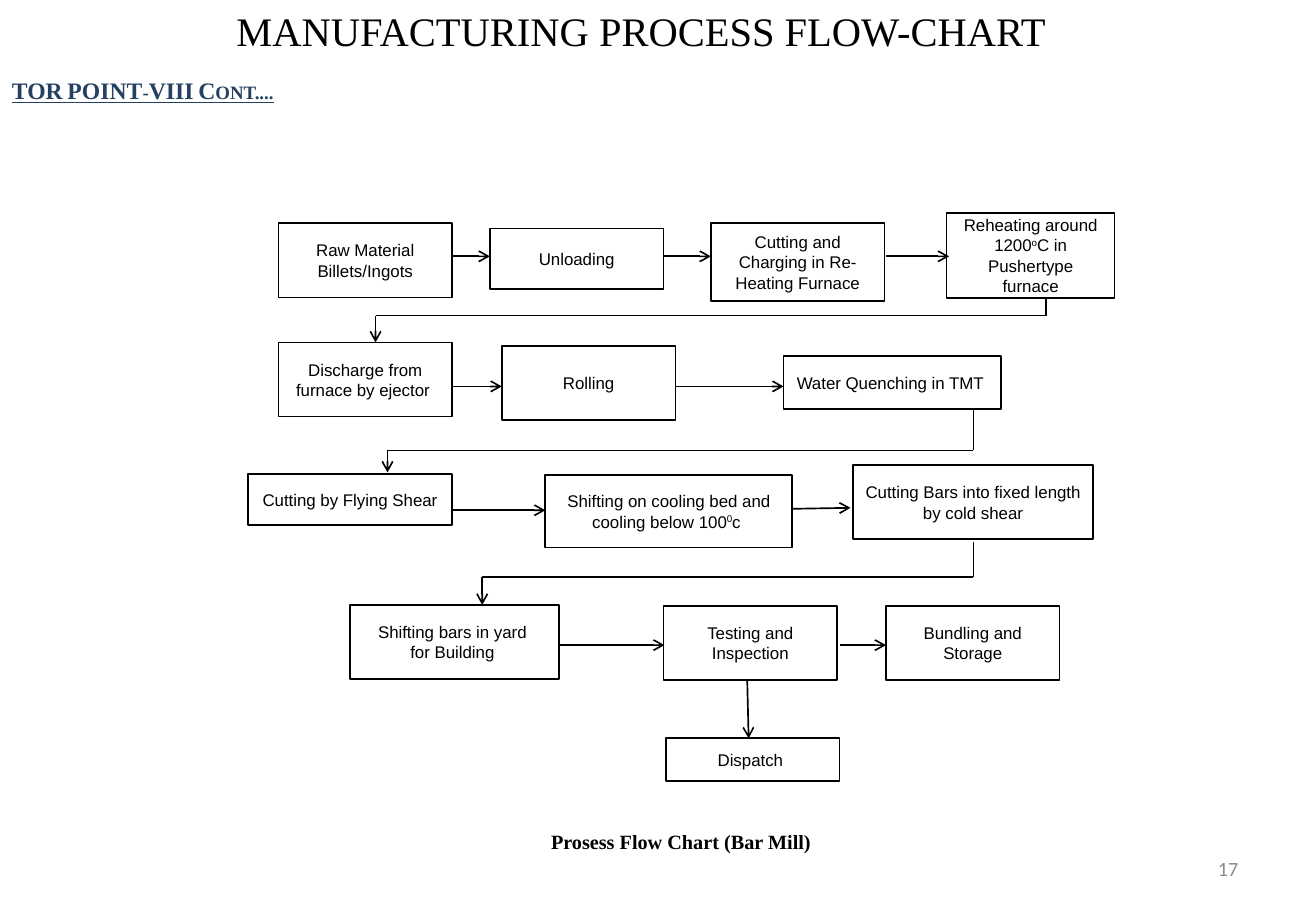
"""Build the bar mill manufacturing process flow-chart slide."""
from itertools import pairwise

from lxml.etree import SubElement
from pptx import Presentation
from pptx.dml.color import RGBColor
from pptx.enum.shapes import MSO_CONNECTOR, MSO_SHAPE
from pptx.enum.text import MSO_ANCHOR, PP_ALIGN
from pptx.oxml.ns import qn
from pptx.util import Cm, Pt


def color(value):
    """Turn a hex string into a colour."""
    return RGBColor.from_string(value)


def write(box, text, font="Times New Roman", size=12, ink="000000", bold=False,
          align=PP_ALIGN.CENTER, anchor=MSO_ANCHOR.MIDDLE, small_caps=False):
    """Fill a box with text; parts between carets are raised."""
    frame = box.text_frame
    frame.word_wrap = True
    frame.vertical_anchor = anchor
    for index, line in enumerate(text.split("\n")):
        para = frame.add_paragraph() if index else frame.paragraphs[0]
        para.alignment = align
        for part, words in enumerate(line.split("^")):
            span = para.add_run()
            span.text = words
            span.font.name = font
            span.font.size = Pt(size)
            span.font.bold = bold
            span.font.color.rgb = color(ink)
            if part % 2:
                span.font._element.set("baseline", "30000")
            if small_caps:
                span.font.underline = True
                span.font._element.set("cap", "small")


deck = Presentation()
deck.slide_width = Cm(27.51)
deck.slide_height = Cm(19.05)
page = deck.slides.add_slide(deck.slide_layouts[6])

labels = [
    (4.4, 0, 18.2, 1.3, "MANUFACTURING PROCESS FLOW-CHART ",
     dict(size=24, anchor=MSO_ANCHOR.TOP)),
    (19.71, 17.65, 6.43, 1.02, "17",
     dict(font="Calibri", ink="8C8C8C", align=PP_ALIGN.RIGHT)),
    (0, 1.47, 24.97, 0.86, "TOR POINT-VIII Cont....",
     dict(size=14, ink="254061", bold=True, align=PP_ALIGN.LEFT,
          anchor=MSO_ANCHOR.TOP, small_caps=True)),
    (11.18, 17.2, 6.12, 0.8, "Prosess Flow Chart (Bar Mill)", dict(bold=True)),
]
for left, top, width, height, text, style in labels:
    box = page.shapes.add_textbox(Cm(left), Cm(top), Cm(width), Cm(height))
    write(box, text, **style)

steps = [
    (5.82, 4.67, 3.63, 1.55, "Raw Material Billets/Ingots"),
    (10.24, 4.78, 3.63, 1.27, "Unloading"),
    (14.86, 4.67, 3.63, 1.63, "Cutting and Charging in Re-Heating Furnace"),
    (19.79, 4.45, 3.51, 1.78, "Reheating around 1200^o^C in Pushertype furnace"),
    (5.82, 7.16, 3.63, 1.55, "Discharge from furnace by ejector "),
    (10.49, 7.24, 3.63, 1.55, "Rolling"),
    (16.38, 7.44, 4.55, 1.12, "Water Quenching in TMT "),
    (5.18, 9.91, 4.27, 1.07, "Cutting by Flying Shear"),
    (11.4, 9.93, 5.16, 1.52, "Shifting on cooling bed and cooling below 100^0^c "),
    (17.83, 9.73, 5.02, 1.55, "Cutting Bars into fixed length by cold shear"),
    (7.32, 12.65, 4.37, 1.55, "Shifting bars in yard \nfor Building "),
    (13.87, 12.67, 3.63, 1.55, "Testing and Inspection"),
    (18.52, 12.67, 3.63, 1.55, "Bundling and Storage"),
    (13.92, 15.44, 3.63, 0.89, "Dispatch "),
]
for left, top, width, height, text in steps:
    box = page.shapes.add_shape(MSO_SHAPE.RECTANGLE, Cm(left), Cm(top), Cm(width), Cm(height))
    box.shadow.inherit = False
    box.fill.solid()
    box.fill.fore_color.rgb = color("FFFFFF")
    box.line.color.rgb = color("000000")
    box.line.width = Pt(1)
    write(box, text, font="Arial", size=10)

routes = [
    [(9.45, 5.36), (10.24, 5.36)],
    [(13.89, 5.36), (14.86, 5.36)],
    [(18.52, 5.36), (19.84, 5.36)],
    [(21.87, 6.25), (21.87, 6.6), (7.85, 6.6), (7.85, 7.16)],
    [(9.45, 8.08), (10.49, 8.08)],
    [(14.12, 8.08), (16.38, 8.08)],
    [(20.35, 8.56), (20.35, 9.42), (8.1, 9.42), (8.1, 9.88)],
    [(9.45, 10.67), (11.4, 10.67)],
    [(16.56, 10.64), (17.78, 10.62)],
    [(20.35, 11.33), (20.35, 12.07), (10.08, 12.07), (10.08, 12.65)],
    [(11.68, 13.49), (13.89, 13.49)],
    [(17.55, 13.49), (18.52, 13.49)],
    [(15.62, 14.22), (15.65, 15.44)],
]
for route in routes:
    for start, end in pairwise(route):
        link = page.shapes.add_connector(
            MSO_CONNECTOR.STRAIGHT, Cm(start[0]), Cm(start[1]), Cm(end[0]), Cm(end[1]))
        link.line.color.rgb = color("000000")
        link.line.width = Pt(1)
        SubElement(link._element.spPr, qn("a:effectLst"))
        if end == route[-1]:
            SubElement(link.line._get_or_add_ln(), qn("a:tailEnd"), type="arrow")

deck.save("out.pptx")
